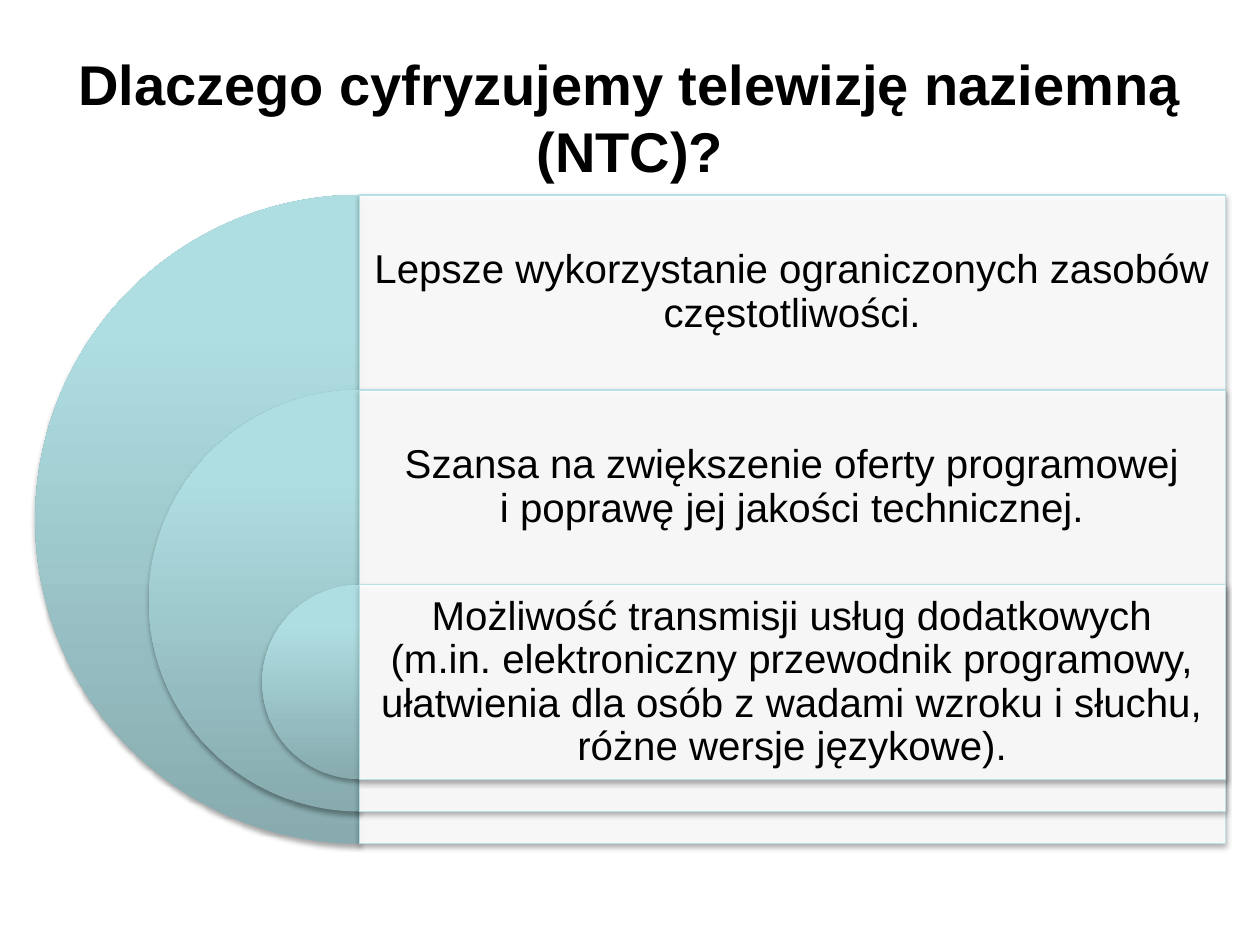
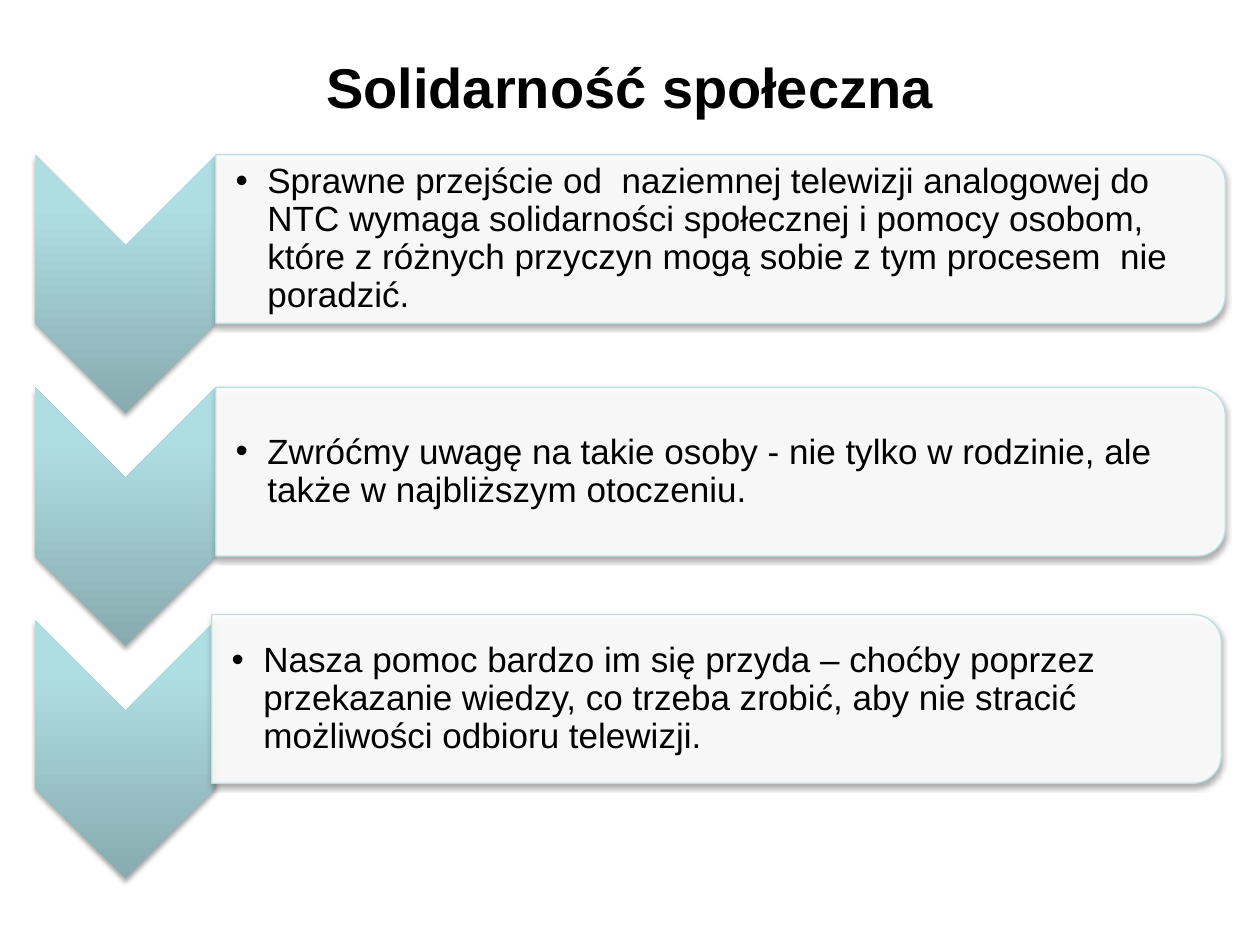
from lxml import etree
from pptx import Presentation
from pptx.dml.color import RGBColor
from pptx.enum.shapes import MSO_SHAPE
from pptx.enum.text import MSO_ANCHOR, MSO_AUTO_SIZE, PP_ALIGN
from pptx.oxml.ns import qn
from pptx.util import Cm, Pt

PIE, RECTANGLE, CHEVRON = MSO_SHAPE.PIE, MSO_SHAPE.RECTANGLE, MSO_SHAPE.CHEVRON
ROUNDED_PANEL = MSO_SHAPE.ROUND_2_SAME_RECTANGLE
MIDDLE = MSO_ANCHOR.MIDDLE
CENTER, LEFT = PP_ALIGN.CENTER, PP_ALIGN.LEFT

REASONS_TITLE = "Dlaczego cyfryzujemy telewizję naziemną (NTC)?"
REASONS = [
    ["Lepsze wykorzystanie ograniczonych zasobów częstotliwości."],
    ["Szansa na zwiększenie oferty programowej",
     "i poprawę jej jakości technicznej."],
    ["Możliwość transmisji usług dodatkowych",
     "(m.in. elektroniczny przewodnik programowy, ułatwienia dla osób "
     "z wadami wzroku i słuchu, różne wersje językowe)."],
]

SOLIDARITY_TITLE = "Solidarność społeczna"
# Each step: text, horizontal and vertical nudge of its panel in cm
SOLIDARITY_STEPS = [
    ("Sprawne przejście od  naziemnej telewizji analogowej do NTC wymaga "
     "solidarności społecznej i pomocy osobom, które z różnych przyczyn mogą "
     "sobie z tym procesem  nie poradzić.", 0, 0),
    ("Zwróćmy uwagę na takie osoby - nie tylko w rodzinie, ale także "
     "w najbliższym otoczeniu.", 0, 0),
    ("Nasza pomoc bardzo im się przyda – choćby poprzez przekazanie wiedzy, "
     "co trzeba zrobić, aby nie stracić możliwości odbioru telewizji.",
     -0.08, -0.11),
]

FONT = "Arial"
COLORS = {
    "text": "000000",
    "shadow": "000000",
    "panel": "FFFFFF",
    "panel_line": "BBE0E3",
    "teal_dark": "87ABAE",
    "teal": "AFDEE2",
    "teal_light": "AFE0E4",
}
TEAL_STOPS = [(0, "teal_dark"), (80, "teal"), (100, "teal_light")]


def rgb(name):
    return RGBColor.from_string(COLORS[name])


def add_element(parent, tag, **attributes):
    return etree.SubElement(
        parent, qn(tag), {key: str(value) for key, value in attributes.items()})


def write_text(frame, paragraphs, size, bold=False, align=CENTER,
               spacing=None, insets=None, bullet_indent=None):
    frame.word_wrap = True
    frame.auto_size = MSO_AUTO_SIZE.NONE
    frame.vertical_anchor = MIDDLE
    if insets:
        (frame.margin_left, frame.margin_top,
         frame.margin_right, frame.margin_bottom) = map(Cm, insets)
    for index, text in enumerate(paragraphs):
        para = frame.paragraphs[0] if index == 0 else frame.add_paragraph()
        para.alignment = align
        if spacing:
            para.line_spacing = spacing
        if bullet_indent:
            properties = para._p.get_or_add_pPr()
            properties.set("marL", str(Cm(bullet_indent)))
            properties.set("indent", str(-Cm(bullet_indent)))
            add_element(properties, "a:buFont", typeface=FONT)
            add_element(properties, "a:buChar", char="•")
        span = para.add_run()
        span.text = text
        span.font.name = FONT
        span.font.size = Pt(size)
        span.font.bold = bold
        span.font.color.rgb = rgb("text")


def add_text_box(slide, place, paragraphs, **text_format):
    box = slide.shapes.add_textbox(*map(Cm, place))
    write_text(box.text_frame, paragraphs, **text_format)


def add_shadowed_shape(slide, kind, place, quarter_turn=False):
    """Add a shape that covers place, also when it is turned by 90 degrees."""
    left, top, width, height = place
    if quarter_turn:
        shift = (width - height) / 2
        left, top, width, height = left + shift, top - shift, height, width
    shape = slide.shapes.add_shape(
        kind, Cm(left), Cm(top), Cm(width), Cm(height))
    shape.rotation = 90 if quarter_turn else 0
    shape.fill.background()
    shape.line.fill.background()
    shape.shadow.inherit = False
    effects = shape._element.spPr.find(qn("a:effectLst"))
    shadow = add_element(effects, "a:outerShdw", blurRad=Pt(3.1), dist=Pt(1.8),
                         dir=5400000, rotWithShape=0)
    color = add_element(shadow, "a:srgbClr", val=COLORS["shadow"])
    add_element(color, "a:alpha", val=35000)
    return shape


def add_teal_shape(slide, kind, place, quarter_turn=False):
    shape = add_shadowed_shape(slide, kind, place, quarter_turn)
    properties = shape._element.spPr
    gradient = etree.Element(qn("a:gradFill"), rotWithShape="0")
    stops = add_element(gradient, "a:gsLst")
    for percent, name in TEAL_STOPS:
        stop = add_element(stops, "a:gs", pos=percent * 1000)
        add_element(stop, "a:srgbClr", val=COLORS[name])
    add_element(gradient, "a:lin", ang=16200000, scaled=0)
    properties.replace(properties.find(qn("a:noFill")), gradient)
    return shape


def add_panel(slide, kind, place, quarter_turn=False):
    shape = add_shadowed_shape(slide, kind, place, quarter_turn)
    shape.fill.solid()
    shape.fill.fore_color.rgb = rgb("panel")
    color = shape._element.spPr.find(qn("a:solidFill")).find(qn("a:srgbClr"))
    add_element(color, "a:alpha", val=90000)
    shape.line.color.rgb = rgb("panel_line")
    shape.line.width = Pt(0.75)


def add_titled_slide(deck, title, title_height):
    slide = deck.slides.add_slide(deck.slide_layouts[5])
    box = slide.shapes.title
    box.left, box.top, box.width, box.height = map(
        Cm, (1.27, 0.76, 22.86, title_height))
    write_text(box.text_frame, [title], size=32, bold=True)
    return slide


def build_reasons(deck):
    """Nested half circles, each opening into a panel to its right."""
    slide = add_titled_slide(deck, REASONS_TITLE, 3.18)
    panel_left, panel_width = 7.25, 17.45
    first_top, row_height = 3.93, 3.93
    largest, shrink = 13.08, 4.58
    for index, paragraphs in enumerate(REASONS):
        top = first_top + index * row_height
        diameter = largest - index * shrink
        half_circle = add_teal_shape(
            slide, PIE, (panel_left - diameter / 2, top, diameter, diameter))
        half_circle.adjustments[0] = 54
        half_circle.adjustments[1] = 162
        add_panel(slide, RECTANGLE, (panel_left, top, panel_width, diameter))
        add_text_box(slide, (panel_left, top, panel_width, row_height),
                     paragraphs, size=23, spacing=0.9, insets=[0.25] * 4)


def build_solidarity(deck):
    """Downward chevrons, each with a bulleted panel to its right."""
    slide = add_titled_slide(deck, SOLIDARITY_TITLE, 1.96)
    first_top, pitch = 3.12, 4.69
    for index, (text, nudge_x, nudge_y) in enumerate(SOLIDARITY_STEPS):
        top = first_top + index * pitch
        add_teal_shape(slide, CHEVRON, (0.7, top, 3.66, 5.21), quarter_turn=True)
        left, top = 4.35 + nudge_x, top + nudge_y
        add_panel(slide, ROUNDED_PANEL, (left, top, 20.35, 3.4),
                  quarter_turn=True)
        add_text_box(slide, (left, top + 0.17, 20.19, 3.07), [text], size=20,
                     align=LEFT, spacing=0.9, bullet_indent=0.64,
                     insets=[0.4, 0.03, 0.03, 0.03])


def main():
    deck = Presentation()
    deck.slide_width, deck.slide_height = Cm(25.4), Cm(19.05)
    build_reasons(deck)
    build_solidarity(deck)
    deck.save("out.pptx")


if __name__ == "__main__":
    main()
